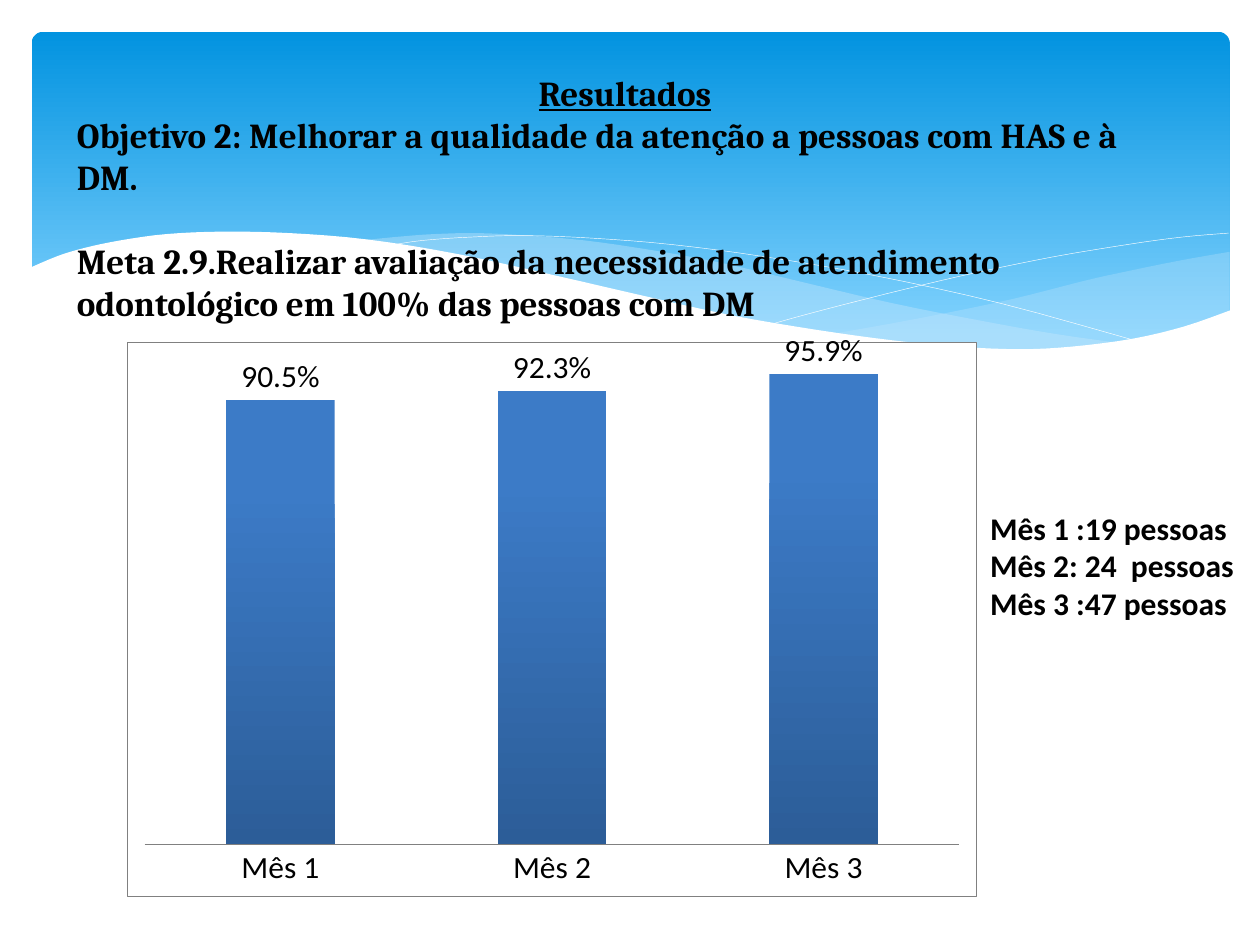
"""Build the results slide: wave banner, objective text, column chart and monthly counts."""
from lxml import etree
from pptx import Presentation
from pptx import util as u
from pptx.chart import data as cd
from pptx.dml.color import RGBColor
from pptx.enum import chart as ch, shapes, text
from pptx.oxml import ns, parse_xml

BLACK = RGBColor(0, 0, 0)
WHITE = RGBColor(0xFF, 0xFF, 0xFF)
GREY = RGBColor(0x80, 0x80, 0x80)
PALE = RGBColor(0xC6, 0xE7, 0xFC)
SKY, SKY_LIGHT = RGBColor(0x02, 0x93, 0xE0), RGBColor(0x83, 0xD3, 0xFE)
BAR, BAR_DARK = RGBColor(0x3C, 0x7B, 0xC7), RGBColor(0x2C, 0x5D, 0x98)
HAIR = u.Pt(0.25)

RIGHT_WAVE = [
    [(24.77, 5.08), (23.75, 5.26), (22.63, 5.49), (21.87, 5.66), (20.45, 6.02),
     (19.13, 6.3), (17.93, 6.53), (16.79, 6.73)],
    [(16.79, 6.73), (18.26, 6.91), (19.53, 7.01), (20.68, 7.06), (21.69, 7.01),
     (22.58, 6.91), (23.39, 6.73), (24.1, 6.53), (24.79, 6.27)],
    [(24.79, 6.27), (24.79, 5.08)],
]
LEFT_WAVE = [
    [(22.68, 6.93), (21.26, 6.73), (19.69, 6.45), (17.93, 6.1), (15.98, 5.64),
     (14.45, 5.28), (13.06, 5.03), (11.81, 4.85), (10.67, 4.75), (9.65, 4.7),
     (8.74, 4.72), (7.95, 4.78), (7.26, 4.85)],
    [(7.26, 4.85), (8.69, 5.05), (10.26, 5.36), (11.4, 5.64), (13.46, 6.1),
     (15.27, 6.48), (16.89, 6.76), (18.34, 6.96), (19.63, 7.04), (20.78, 7.06),
     (21.77, 7.04), (22.68, 6.93)],
]
LONG_LINE = [
    [(7.85, 4.95), (8.5, 4.85), (9.5, 4.78), (10.57, 4.75), (11.91, 4.8),
     (13.54, 4.93), (15.44, 5.18), (17.65, 5.56), (20.19, 6.12), (23.04, 6.91)],
]
RISING_LINE = [
    [(15.57, 6.53), (16.59, 6.25), (18.29, 5.82), (19.71, 5.49), (21.23, 5.18),
     (22.73, 4.93), (23.83, 4.78), (24.77, 4.7)],
]
WHITE_WAVE = [
    [(24.82, 6.25), (23.88, 6.58), (22.83, 6.83), (21.59, 6.99), (20.55, 7.04),
     (19.33, 6.99), (17.98, 6.86), (16.46, 6.65), (14.71, 6.35), (12.78, 5.92),
     (11.35, 5.59), (9.27, 5.13), (7.42, 4.83), (5.84, 4.7), (4.5, 4.67),
     (3.35, 4.72), (2.41, 4.85), (1.7, 5), (1.17, 5.16), (0.58, 5.41)],
    [(0.58, 5.41), (0.58, 8.36)],
    [(0.58, 8.36), (24.82, 8.36)],
    [(24.82, 8.36), (24.82, 6.25)],
]


def smooth(knots, steps=4):
    """Return points of a Catmull-Rom curve through the knots."""
    if len(knots) == 2:
        return knots
    ext = [knots[0], *knots, knots[-1]]
    pts = [knots[0]]
    for a, b, c, d in zip(ext, ext[1:], ext[2:], ext[3:]):
        for t in (i / steps for i in range(1, steps + 1)):
            pts.append(tuple(
                (2 * q + (r - p) * t + (2 * p - 5 * q + 4 * r - s) * t ** 2
                 + (3 * q - p - 3 * r + s) * t ** 3) / 2
                for p, q, r, s in zip(a, b, c, d)))
    return pts


class Deck:
    """Hold the style and the current slide."""

    formats = {
        "title": dict(name="Cambria", size=u.Pt(20), bold=True, underline=True),
        "body": dict(name="Cambria", size=u.Pt(20), bold=True),
        "note": dict(name="Calibri", size=u.Pt(18), bold=True),
        "chart": dict(name="Calibri", size=u.Pt(18)),
    }

    def __init__(self):
        self.prs = Presentation()
        self.prs.slide_width, self.prs.slide_height = u.Cm(25.4), u.Cm(19.05)
        self.s = self.prs.slides.add_slide(self.prs.slide_layouts[6])

    def style(self, font, kind):
        for key, value in self.formats[kind].items():
            setattr(font, key, value)
        font.color.rgb = BLACK

    def gradient(self, fill, *stops):
        fill.gradient()
        fill.gradient_angle = 270
        for stop, (pos, color) in zip(fill.gradient_stops, stops):
            stop.position, stop.color.rgb = pos, color

    def banner(self, x, y, w, h):
        sp = self.s.shapes.add_shape(shapes.MSO_SHAPE.ROUNDED_RECTANGLE,
                                     *map(u.Cm, (x, y, w, h)))
        sp.adjustments[0] = 0.034
        sp.shadow.inherit = False
        sp.line.fill.background()
        self.gradient(sp.fill, (0, SKY), (0.9, SKY_LIGHT))

    def curve(self, sections, fill=None, opacity=100):
        pts = [(u.Cm(x), u.Cm(y)) for part in sections for x, y in smooth(part)]
        fb = self.s.shapes.build_freeform(*pts[0])
        fb.add_line_segments(pts[1:], close=fill is not None)
        sp = fb.convert_to_shape()
        sp.shadow.inherit = False
        if fill is None:
            sp.fill.background()
            sp.line.color.rgb, sp.line.width = WHITE, HAIR
            return
        sp.line.fill.background()
        sp.fill.solid()
        sp.fill.fore_color.rgb = fill
        if opacity < 100:
            clr = sp.fill._xPr.find(".//" + ns.qn("a:srgbClr"))
            etree.SubElement(clr, ns.qn("a:alpha"), val=str(opacity * 1000))

    def text(self, x, y, w, h, paragraphs):
        tf = self.s.shapes.add_textbox(*map(u.Cm, (x, y, w, h))).text_frame
        tf.word_wrap = True
        for i, (words, kind, align, before) in enumerate(paragraphs):
            p = tf.add_paragraph() if i else tf.paragraphs[0]
            p.alignment, p.space_before = align, u.Pt(before)
            r = p.add_run()
            r.text = words
            self.style(r.font, kind)

    def columns(self, x, y, w, h, values):
        data = cd.CategoryChartData(number_format="0.0%")
        data.categories = values.keys()
        data.add_series("Series 1", values.values())
        chart = self.s.shapes.add_chart(ch.XL_CHART_TYPE.COLUMN_CLUSTERED,
                                        *map(u.Cm, (x, y, w, h)), data).chart
        chart.has_legend = chart.has_title = False
        self.style(chart.font, "chart")
        cat, val = chart.category_axis, chart.value_axis
        cat.major_tick_mark = ch.XL_TICK_MARK.NONE
        cat.format.line.color.rgb, cat.format.line.width = GREY, HAIR
        self.style(cat.tick_labels.font, "chart")
        val.minimum_scale, val.maximum_scale, val.major_unit = 0, 1, 0.1
        val.has_major_gridlines = val.visible = False
        plot = chart.plots[0]
        plot.gap_width, plot.overlap, plot.vary_by_categories = 150, -25, False
        self.gradient(plot.series[0].format.fill, (0.2, BAR), (1, BAR_DARK))
        plot.has_data_labels = True
        labels = plot.data_labels
        labels.show_value = True
        labels.number_format, labels.number_format_is_linked = "0.0%", False
        labels.position = ch.XL_LABEL_POSITION.OUTSIDE_END
        self.style(labels.font, "chart")
        self.frame(chart)

    def frame(self, chart):
        area = chart._chartSpace.chart.plotArea
        for old in area.findall(ns.qn("c:layout")):
            area.remove(old)
        box = dict(x=0.02, y=0.02, w=0.96, h=0.885)
        sizes = "".join(f'<c:{k} val="{v}"/>' for k, v in box.items())
        area.insert(0, parse_xml(
            f'<c:layout {ns.nsdecls("c")}><c:manualLayout><c:layoutTarget val="inner"/>'
            f'<c:xMode val="edge"/><c:yMode val="edge"/>{sizes}</c:manualLayout></c:layout>'))
        solid = f'<a:solidFill><a:srgbClr val="{WHITE}"/></a:solidFill>'
        border = (f'<a:ln w="{HAIR}"><a:solidFill><a:srgbClr val="{GREY}"/>'
                  '</a:solidFill></a:ln>')
        props = '<c:spPr {}>{}</c:spPr>'
        decl = ns.nsdecls("c", "a")
        area.append(parse_xml(props.format(decl, solid)))
        chart._chartSpace.chart.addnext(parse_xml(props.format(decl, solid + border)))


def main():
    """Assemble and save the slide."""
    d = Deck()
    d.banner(0.64, 0.64, 24.15, 6.86)
    d.curve(RIGHT_WAVE, PALE, 29)
    d.curve(LEFT_WAVE, PALE, 40)
    d.curve(LONG_LINE)
    d.curve(RISING_LINE)
    d.curve(WHITE_WAVE, WHITE)
    left, center = text.PP_ALIGN.LEFT, text.PP_ALIGN.CENTER
    d.text(1.3, 1.32, 22.6, 5.31, [
        ("Resultados", "title", center, 0),
        ("Objetivo 2: Melhorar a qualidade da atenção a pessoas com HAS e à DM.",
         "body", left, 0),
        ("Meta 2.9.Realizar avaliação da necessidade de atendimento odontológico "
         "em 100% das pessoas com DM", "body", left, 24),
    ])
    notes = ("Mês 1 :19 pessoas", "Mês 2: 24  pessoas", "Mês 3 :47 pessoas")
    d.text(19.71, 10.13, 7.87, 2.57, [(n, "note", left, 0) for n in notes])
    d.columns(2.57, 6.68, 17.12, 11.4, {"Mês 1": 0.905, "Mês 2": 0.923, "Mês 3": 0.959})
    d.prs.save("out.pptx")


if __name__ == "__main__":
    main()
